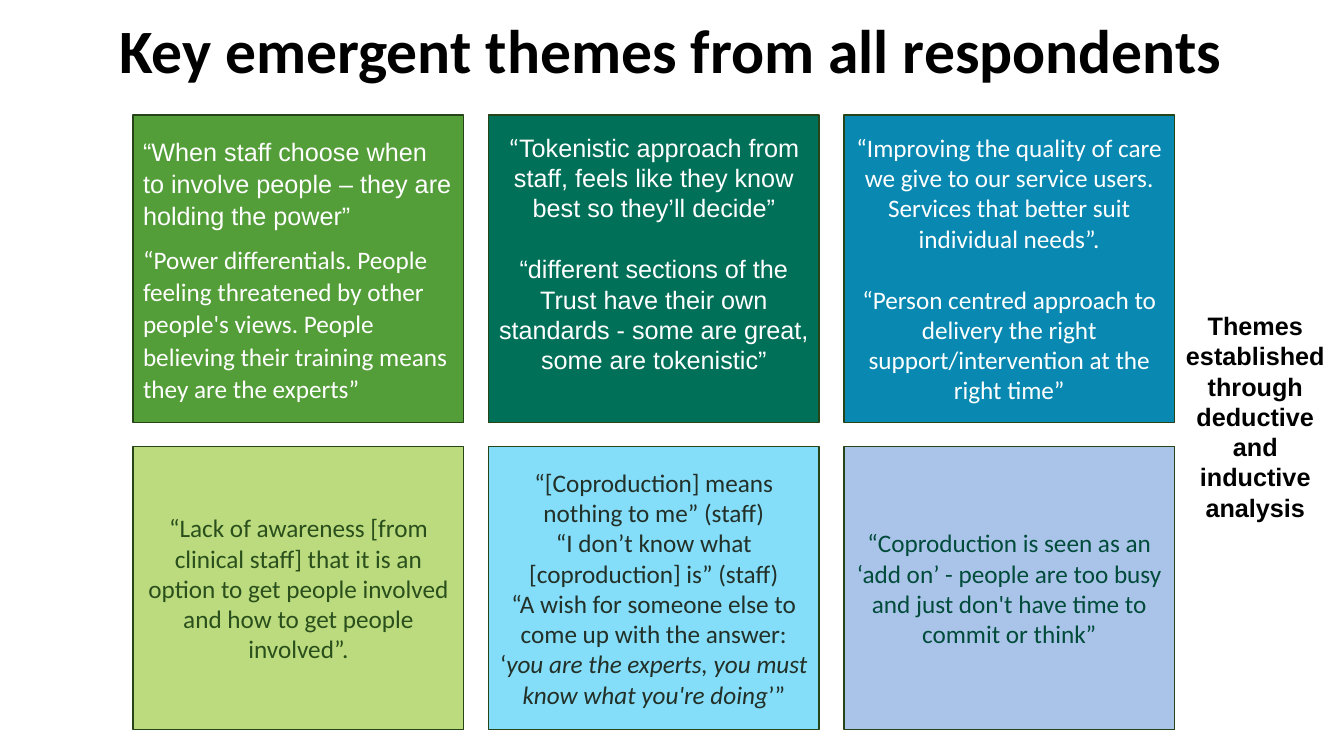
import pptx
import pptx.dml.color
import pptx.enum.shapes
import pptx.enum.text
import pptx.util
from pptx.util import Inches

ALIGN = pptx.enum.text.PP_ALIGN
ANCHOR = pptx.enum.text.MSO_ANCHOR


def rgb(value):
    return pptx.dml.color.RGBColor.from_string(value)


class ThemeSlide:
    body_size = 18
    title_size = 44
    outline = "254519"

    def __init__(self, prs):
        self.s = prs.slides.add_slide(prs.slide_layouts[5])

    def paragraph(self, tf, first, runs, color, size=body_size, bold=False,
                  align=ALIGN.CENTER, gap=0, spacing=None):
        """Fill one paragraph from (text, font, italic) runs; gap goes above later ones."""
        p = tf.paragraphs[0] if first else tf.add_paragraph()
        p.alignment = align
        p.space_before = pptx.util.Pt(0 if first else gap)
        if spacing:
            p.line_spacing = spacing
        for text, font, italic in runs:
            r = p.add_run()
            r.text = text
            r.font.name = font
            r.font.size = pptx.util.Pt(size)
            r.font.bold = bold
            r.font.italic = italic
            r.font.color.rgb = rgb(color)

    def title(self, text, left, top, width, height):
        sp = self.s.shapes.title
        sp.left, sp.top, sp.width, sp.height = map(Inches, (left, top, width, height))
        tf = sp.text_frame
        tf.word_wrap = True
        tf.auto_size = pptx.enum.text.MSO_AUTO_SIZE.NONE
        tf.vertical_anchor = ANCHOR.MIDDLE
        self.paragraph(tf, True, [(text, "Calibri", False)], "000000", self.title_size, True)

    def card(self, left, top, width, height, fill, color, paragraphs, lift=0, **style):
        """Draw a quote card; lift is extra bottom margin that raises the text."""
        sp = self.s.shapes.add_shape(pptx.enum.shapes.MSO_SHAPE.RECTANGLE,
                                     *map(Inches, (left, top, width, height)))
        sp.shadow.inherit = False
        sp.fill.solid()
        sp.fill.fore_color.rgb = rgb(fill)
        sp.line.color.rgb = rgb(self.outline)
        sp.line.width = pptx.util.Pt(1)
        tf = sp.text_frame
        tf.word_wrap = True
        tf.vertical_anchor = ANCHOR.MIDDLE
        tf.margin_bottom = Inches(0.05 + lift)
        for i, runs in enumerate(paragraphs):
            self.paragraph(tf, i == 0, runs, color, **style)

    def label(self, text, left, top, width, height):
        sp = self.s.shapes.add_textbox(*map(Inches, (left, top, width, height)))
        sp.text_frame.word_wrap = True
        self.paragraph(sp.text_frame, True, [(text, "Arial", False)], "000000", bold=True)


def calibri(text):
    return [(text, "Calibri", False)]


def arial(text):
    return [(text, "Arial", False)]


CARD_LEFT, CARD_PITCH, CARD_WIDTH = 1.32, 3.525, 3.28
ROWS = [(1.14, 3.05), (4.43, 2.81)]
BLANK_LINE = 22

# Each card: fill, text colour, paragraphs, style; three cards to a row
CARDS = [
    ("549E39", "FFFFFF", [
        arial("“When staff choose when to involve people – they are holding the power”"),
        calibri("“Power differentials. People feeling threatened by other people's views. "
                "People believing their training means they are the experts”"),
    ], dict(align=ALIGN.LEFT, gap=8, spacing=1.07)),
    ("017058", "FFFFFF", [
        calibri("“") + arial("Tokenistic approach from staff, feels like they know best "
                             "so they’ll decide”"),
        arial("“different sections of the Trust have their own standards - "
              "some are great, some are tokenistic”"),
    ], dict(gap=BLANK_LINE, lift=0.3)),
    ("0989B1", "FFFFFF", [
        calibri("“Improving the quality of care we give to our service users. "
                "Services that better suit individual needs”."),
        calibri("“Person centred approach to delivery the right "
                "support/intervention at the right time”"),
    ], dict(gap=BLANK_LINE)),
    ("BBDB7E", "2A4F1C", [
        calibri("“Lack of awareness [from clinical staff] that it is an option to get "
                "people involved and how to get people involved”."),
    ], {}),
    ("84DDF9", "223028", [
        calibri("“[Coproduction] means nothing to me” (staff)"),
        calibri("“I don’t know what [coproduction] is” (staff)"),
        calibri("“A wish for someone else to come up with the answer: ‘")
        + [("you are the experts, you must know what you're doing", "Calibri", True)]
        + calibri("’”"),
    ], {}),
    ("AAC4E9", "014B3B", [
        calibri("“Coproduction is seen as an ‘add on’ - people are too busy "
                "and just don't have time to commit or think”"),
    ], {}),
]


def main():
    prs = pptx.Presentation()
    prs.slide_width, prs.slide_height = Inches(13.33), Inches(7.5)
    slide = ThemeSlide(prs)
    slide.title("Key emergent themes from all respondents", 0.82, 0.06, 11.67, 0.84)
    for i, (fill, color, paragraphs, style) in enumerate(CARDS):
        row, col = divmod(i, 3)
        top, height = ROWS[row]
        slide.card(CARD_LEFT + col * CARD_PITCH, top, CARD_WIDTH, height,
                   fill, color, paragraphs, **style)
    slide.label("Themes established through deductive and inductive analysis",
                11.64, 3.03, 1.62, 2.22)
    prs.save("out.pptx")


if __name__ == "__main__":
    main()
